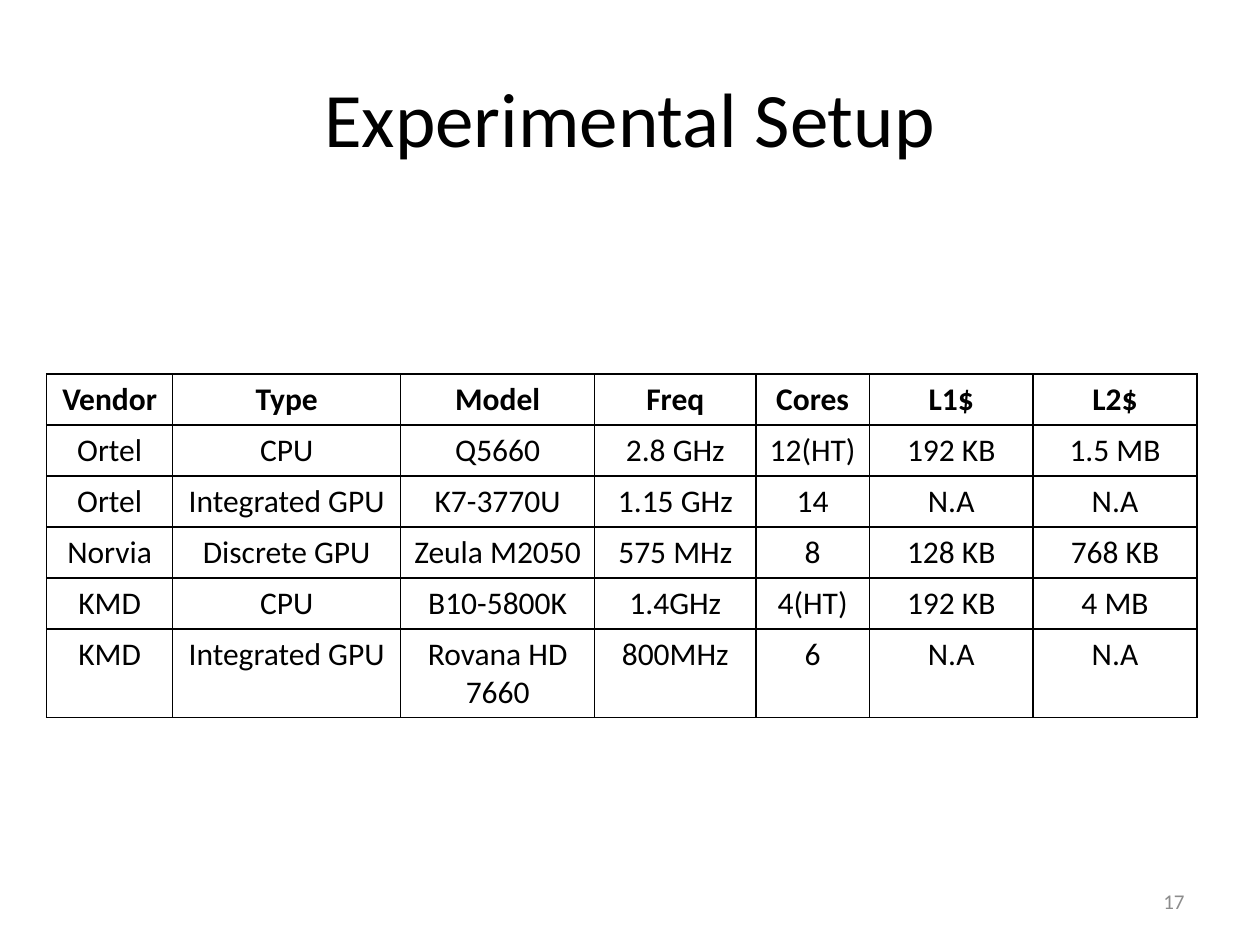
from lxml.etree import SubElement
from pptx import Presentation
from pptx.dml.color import RGBColor
from pptx.enum.text import MSO_ANCHOR, PP_ALIGN
from pptx.oxml.ns import qn
from pptx.util import Inches, Pt

BLACK = RGBColor(0x00, 0x00, 0x00)
GRAY = RGBColor(0x8C, 0x8C, 0x8C)

COLUMN_WIDTHS = [1, 1.81, 1.54, 1.28, 0.9, 1.3, 1.3]
TABLE_HEIGHT = 2.43
DEVICES = [
    ["Vendor", "Type", "Model", "Freq", "Cores", "L1$", "L2$"],
    ["Ortel", "CPU", "Q5660", "2.8 GHz", "12(HT)", "192 KB", "1.5 MB"],
    ["Ortel", "Integrated GPU", "K7-3770U", "1.15 GHz", "14", "N.A", "N.A"],
    ["Norvia", "Discrete GPU", "Zeula M2050", "575 MHz", "8", "128 KB", "768 KB"],
    ["KMD", "CPU", "B10-5800K", "1.4GHz", "4(HT)", "192 KB", "4 MB"],
    ["KMD", "Integrated GPU", "Rovana HD 7660", "800MHz", "6", "N.A", "N.A"],
]


def write_text(frame, text, size, color, align, bold=False):
    frame.word_wrap = True
    paragraph = frame.paragraphs[0]
    paragraph.text = text
    paragraph.alignment = align
    paragraph.font.name = "Calibri"
    paragraph.font.size = Pt(size)
    paragraph.font.bold = bold
    paragraph.font.color.rgb = color


def add_borders(cell):
    """Draw a 1 pt black line on all four sides; call before setting the fill."""
    properties = cell._tc.get_or_add_tcPr()
    for side in ("lnL", "lnR", "lnT", "lnB"):
        line = SubElement(properties, qn(f"a:{side}"), w=str(Pt(1)))
        fill = SubElement(line, qn("a:solidFill"))
        SubElement(fill, qn("a:srgbClr"), val=str(BLACK))


prs = Presentation()
prs.slide_width = Inches(10)
prs.slide_height = Inches(7.5)
slide = prs.slides.add_slide(prs.slide_layouts[6])

title = slide.shapes.add_textbox(Inches(0.5), Inches(0.3), Inches(9), Inches(1.25))
title.text_frame.vertical_anchor = MSO_ANCHOR.MIDDLE
write_text(title.text_frame, "Experimental Setup", 44, BLACK, PP_ALIGN.CENTER)

page_number = slide.shapes.add_textbox(
    Inches(7.17), Inches(6.95), Inches(2.33), Inches(0.4))
page_number.text_frame.vertical_anchor = MSO_ANCHOR.MIDDLE
write_text(page_number.text_frame, "17", 12, GRAY, PP_ALIGN.RIGHT)

device_table = slide.shapes.add_table(
    len(DEVICES), len(COLUMN_WIDTHS), Inches(0.37), Inches(2.97),
    Inches(sum(COLUMN_WIDTHS)), Inches(TABLE_HEIGHT)).table
device_table.horz_banding = False

for column, width in zip(device_table.columns, COLUMN_WIDTHS):
    column.width = Inches(width)

for row_index, (row, device) in enumerate(zip(device_table.rows, DEVICES)):
    row.height = Inches(TABLE_HEIGHT / len(DEVICES))
    for cell, value in zip(row.cells, device):
        write_text(cell.text_frame, value, 18, BLACK, PP_ALIGN.CENTER,
                   bold=row_index == 0)
        add_borders(cell)
        cell.fill.background()

prs.save("out.pptx")
